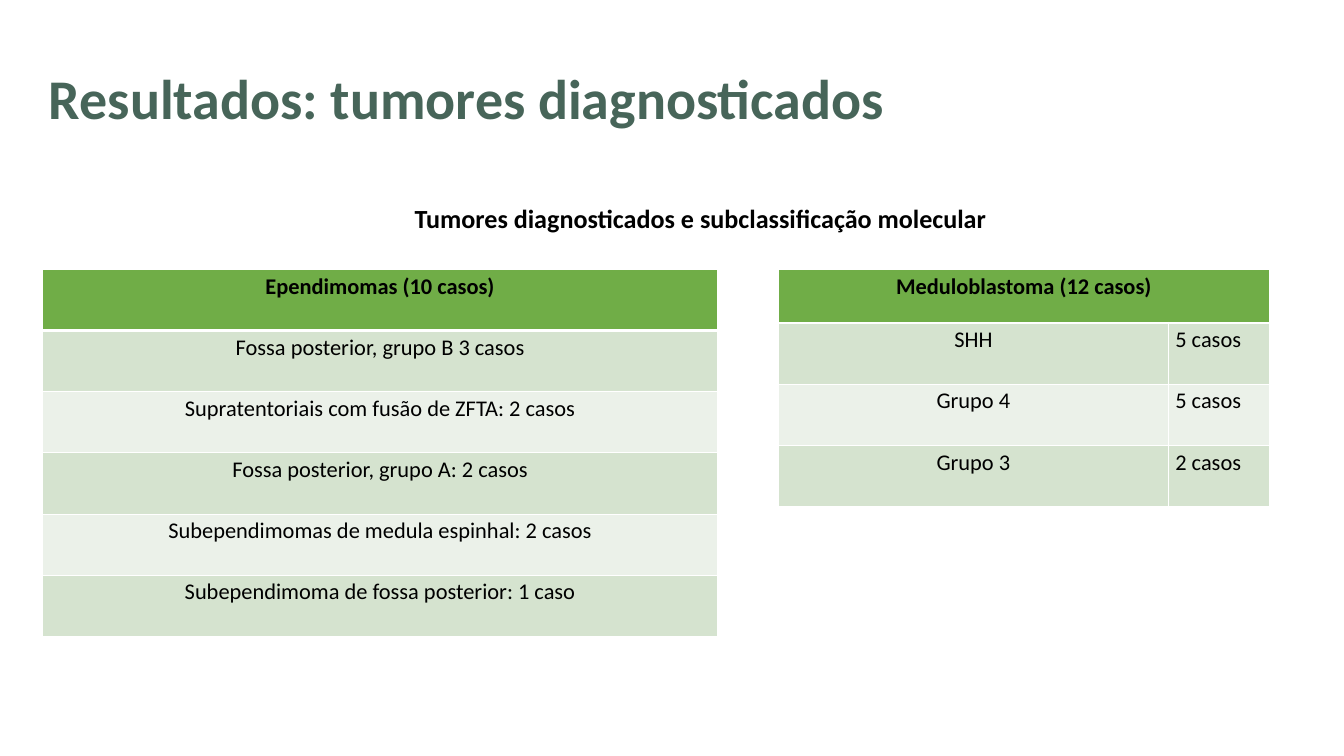
from lxml import etree
from pptx import Presentation
from pptx.dml.color import RGBColor
from pptx.enum import text
from pptx.oxml.ns import qn
from pptx.util import Inches, Pt

FONT = "Calibri"
TITLE_GREEN = RGBColor(0x47, 0x65, 0x59)
HEADER_GREEN = RGBColor(0x70, 0xAD, 0x47)
BANDS = RGBColor(0xD5, 0xE3, 0xCF), RGBColor(0xEB, 0xF1, 0xE9)
BLACK = RGBColor(0, 0, 0)
WHITE = RGBColor(0xFF, 0xFF, 0xFF)

ROW_HEIGHT = 0.91
EPENDYMOMAS = [
    ["Ependimomas (10 casos)"],
    ["Fossa posterior, grupo B 3 casos"],
    ["Supratentoriais com fusão de ZFTA: 2 casos"],
    ["Fossa posterior, grupo A: 2 casos"],
    ["Subependimomas de medula espinhal: 2 casos"],
    ["Subependimoma de fossa posterior: 1 caso"],
]
MEDULLOBLASTOMAS = [
    ["Meduloblastoma (12 casos)", ""],
    ["SHH", "5 casos"],
    ["Grupo 4", "5 casos"],
    ["Grupo 3", "2 casos"],
]


def write(frame, words, size, color, bold, align):
    frame.text = words
    para = frame.paragraphs[0]
    para.alignment = align
    for span in para.runs:
        span.font.name = FONT
        span.font.size = Pt(size)
        span.font.bold = bold
        span.font.color.rgb = color
    return para


def add_label(page, box, words, size, color, align):
    frame = page.shapes.add_textbox(*map(Inches, box)).text_frame
    frame.word_wrap = True
    return write(frame, words, size, color, True, align)


def add_title(page, box):
    para = add_label(page, box, "Resultados: tumores diagnosticados", 60,
                     TITLE_GREEN, text.PP_ALIGN.LEFT)
    para.line_spacing = Pt(92)


def add_subtitle(page, box):
    add_label(page, box, "Tumores diagnosticados e subclassificação molecular",
              28, BLACK, text.PP_ALIGN.CENTER)


def set_borders(cell, widths):
    """Draw white edges; widths gives points for left, right, top, bottom."""
    properties = cell._tc.get_or_add_tcPr()
    for index, (side, width) in enumerate(zip("LRTB", widths)):
        line = etree.Element(qn(f"a:ln{side}"), w=str(Pt(width)))
        fill = etree.SubElement(line, qn("a:solidFill"))
        etree.SubElement(fill, qn("a:srgbClr"), val=str(WHITE))
        properties.insert(index, line)


def add_case_table(page, left, top, widths, header_height, rows):
    """Add a table whose first row is one header across all columns."""
    heights = [header_height] + [ROW_HEIGHT] * (len(rows) - 1)
    box = left, top, sum(widths), sum(heights)
    table = page.shapes.add_table(len(rows), len(widths),
                                  *map(Inches, box)).table
    table.first_row = table.horz_banding = False
    for column, width in zip(table.columns, widths):
        column.width = Inches(width)
    for row, height in zip(table.rows, heights):
        row.height = Inches(height)
    if len(widths) > 1:
        table.cell(0, 0).merge(table.cell(0, len(widths) - 1))

    for r, row in enumerate(rows):
        for c, words in enumerate(row):
            cell = table.cell(r, c)
            cell.fill.solid()
            cell.fill.fore_color.rgb = BANDS[(r - 1) % 2] if r else HEADER_GREEN
            set_borders(cell, (1, 1, 3 if r == 1 else 1, 1 if r else 3))
            if not cell.is_spanned:
                align = text.PP_ALIGN.LEFT if c else text.PP_ALIGN.CENTER
                write(cell.text_frame, words, 24, BLACK, r == 0, align)


def main():
    deck = Presentation()
    deck.slide_width, deck.slide_height = Inches(20), Inches(11.25)
    page = deck.slides.add_slide(deck.slide_layouts[6])
    add_title(page, (0.63, 0.62, 13.5, 1.33))
    add_subtitle(page, (1.65, 2.96, 17.54, 0.57))
    add_case_table(page, 11.58, 4.01, [5.81, 1.5], 0.8, MEDULLOBLASTOMAS)
    add_case_table(page, 0.63, 4.01, [10.05], ROW_HEIGHT, EPENDYMOMAS)
    deck.save("out.pptx")


if __name__ == "__main__":
    main()
